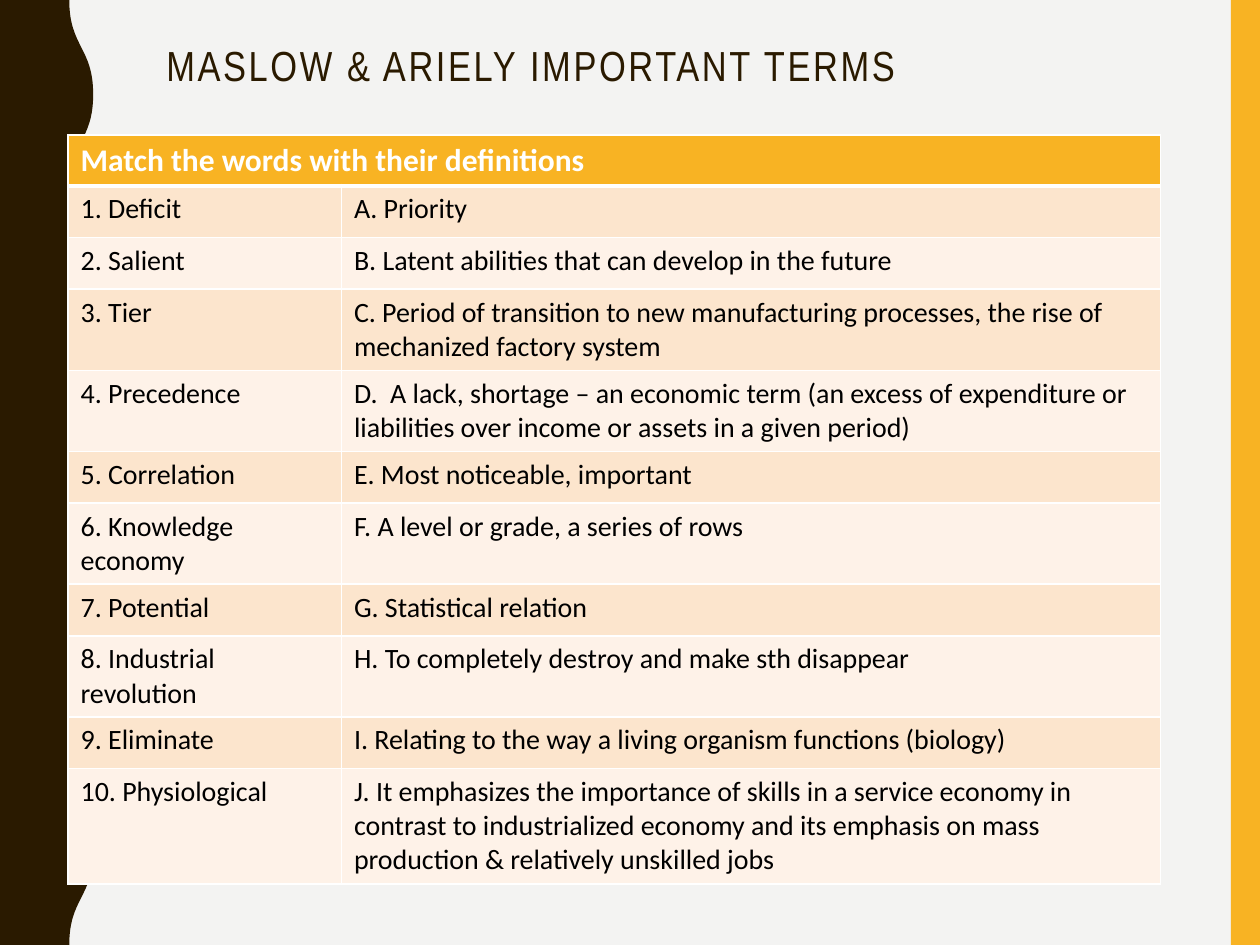
import pptx
import pptx.util
import pptx.dml.color
import pptx.enum.shapes
import pptx.enum.text
import pptx.oxml
import pptx.oxml.ns

Inches = pptx.util.Inches
Pt = pptx.util.Pt

COLORS = {
    "background": "F3F3F2",
    "gold": "F8B323",
    "brown": "2A1A00",
    "band_dark": "FCE5CD",
    "band_light": "FEF2E8",
    "white": "FFFFFF",
    "black": "000000",
}
HEADER = "Match the words with their definitions"
TERMS = [
    ("1. Deficit", "A. Priority"),
    ("2. Salient", "B. Latent abilities that can develop in the future"),
    ("3. Tier", "C. Period of transition to new manufacturing processes, "
     "the rise of mechanized factory system"),
    ("4. Precedence", "D.  A lack, shortage – an economic term (an excess of "
     "expenditure or liabilities over income or assets in a given period)"),
    ("5. Correlation", "E. Most noticeable, important"),
    ("6. Knowledge economy", "F. A level or grade, a series of rows"),
    ("7. Potential", "G. Statistical relation"),
    ("8. Industrial revolution",
     "H. To completely destroy and make sth disappear"),
    ("9. Eliminate",
     "I. Relating to the way a living organism functions (biology)"),
    ("10. Physiological", "J. It emphasizes the importance of skills in a "
     "service economy in contrast to industrialized economy and its emphasis "
     "on mass production & relatively unskilled jobs"),
]
HEADER_HEIGHT = 0.24
ROW_HEIGHT = 0.41
COLUMN_WIDTHS = (2.17, 6.5)


def rgb(name):
    return pptx.dml.color.RGBColor.from_string(COLORS[name])


def paint(sp, color):
    sp.fill.solid()
    sp.fill.fore_color.rgb = rgb(color)
    sp.line.fill.background()
    sp.shadow.inherit = False


def style_font(font, color, **values):
    for name, value in values.items():
        setattr(font, name, value)
    font.color.rgb = rgb(color)


def add_side_bar(s):
    sp = s.shapes.add_shape(pptx.enum.shapes.MSO_SHAPE.RECTANGLE,
                            Inches(9.77), 0, Inches(0.23), Inches(7.5))
    paint(sp, "gold")


def add_wavy_edge(s):
    """Draw the left band; its right edge swings between two x values."""
    inner, outer, half_wave, count = 0.55, 0.74, 0.75, 10
    edge = [(Inches(outer if i % 2 else inner), Inches(i * half_wave))
            for i in range(count + 1)]
    builder = s.shapes.build_freeform(*edge[0], scale=1.0)
    builder.add_line_segments(edge[1:] + [(0, Inches(7.5)), (0, 0)])
    sp = builder.convert_to_shape()
    paint(sp, "brown")

    # Turn the straight pieces of the edge into curves
    lines = list(sp._element.iter(pptx.oxml.ns.qn("a:lnTo")))
    for line, (x1, y1), (x2, y2) in zip(lines, edge, edge[1:]):
        middle = (y1 + y2) // 2
        points = "".join(f'<a:pt x="{x}" y="{y}"/>' for x, y in
                         ((x1, middle), (x2, middle), (x2, y2)))
        curve = pptx.oxml.parse_xml(
            f'<a:cubicBezTo {pptx.oxml.ns.nsdecls("a")}>{points}'
            f'</a:cubicBezTo>')
        line.getparent().replace(line, curve)


def set_title(s, text):
    title = s.shapes.title
    box = {"left": 1.22, "top": 0.31, "width": 8.17, "height": 0.54}
    for name, value in box.items():
        setattr(title, name, Inches(value))
    tf = title.text_frame
    tf.word_wrap = True
    tf.auto_size = pptx.enum.text.MSO_AUTO_SIZE.NONE
    tf.vertical_anchor = pptx.enum.text.MSO_ANCHOR.TOP
    p = tf.paragraphs[0]
    p.alignment = pptx.enum.text.PP_ALIGN.LEFT
    p.line_spacing = 0.9
    r = p.add_run()
    r.text = text
    style_font(r.font, "brown", name="Arial Narrow", size=Pt(24))
    r.font._element.set("spc", "150")


def set_borders(cell, top=1, bottom=1):
    tc_pr = cell._tc.get_or_add_tcPr()
    widths = {"lnL": 1, "lnR": 1, "lnT": top, "lnB": bottom}
    for i, (tag, width) in enumerate(widths.items()):
        line = pptx.oxml.parse_xml(
            f'<a:{tag} {pptx.oxml.ns.nsdecls("a")} w="{Pt(width)}">'
            f'<a:solidFill><a:srgbClr val="{COLORS["white"]}"/></a:solidFill>'
            f'</a:{tag}>')
        tc_pr.insert(i, line)


def fill_cell(cell, text, fill, color, size, bold=False):
    cell.fill.solid()
    cell.fill.fore_color.rgb = rgb(fill)
    r = cell.text_frame.paragraphs[0].add_run()
    r.text = text
    style_font(r.font, color, name="Calibri", size=Pt(size), bold=bold)


def add_terms_table(s):
    heights = [HEADER_HEIGHT] + [ROW_HEIGHT] * len(TERMS)
    frame = s.shapes.add_table(len(heights), 2, Inches(0.54), Inches(1.07),
                               Inches(sum(COLUMN_WIDTHS)), Inches(5.86))
    table = frame.table
    for column, width in zip(table.columns, COLUMN_WIDTHS):
        column.width = Inches(width)
    for row, height in zip(table.rows, heights):
        row.height = Inches(height)
    frame.height = Inches(5.86)

    table.cell(0, 0).merge(table.cell(0, 1))
    fill_cell(table.cell(0, 0), HEADER, "gold", "white", 18, bold=True)
    for i, term in enumerate(TERMS, 1):
        band = "band_dark" if i % 2 else "band_light"
        for j, text in enumerate(term):
            fill_cell(table.cell(i, j), text, band, "black", 16)
    for i in range(len(heights)):
        for j in range(2):
            set_borders(table.cell(i, j), top=3 if i == 1 else 1,
                        bottom=3 if i == 0 else 1)


def main():
    prs = pptx.Presentation()
    prs.slide_width, prs.slide_height = Inches(10), Inches(7.5)
    s = prs.slides.add_slide(prs.slide_layouts[5])
    s.background.fill.solid()
    s.background.fill.fore_color.rgb = rgb("background")
    add_side_bar(s)
    add_wavy_edge(s)
    set_title(s, "MASLOW & ARIELY IMPORTANT TERMS")
    add_terms_table(s)
    prs.save("out.pptx")


if __name__ == "__main__":
    main()
